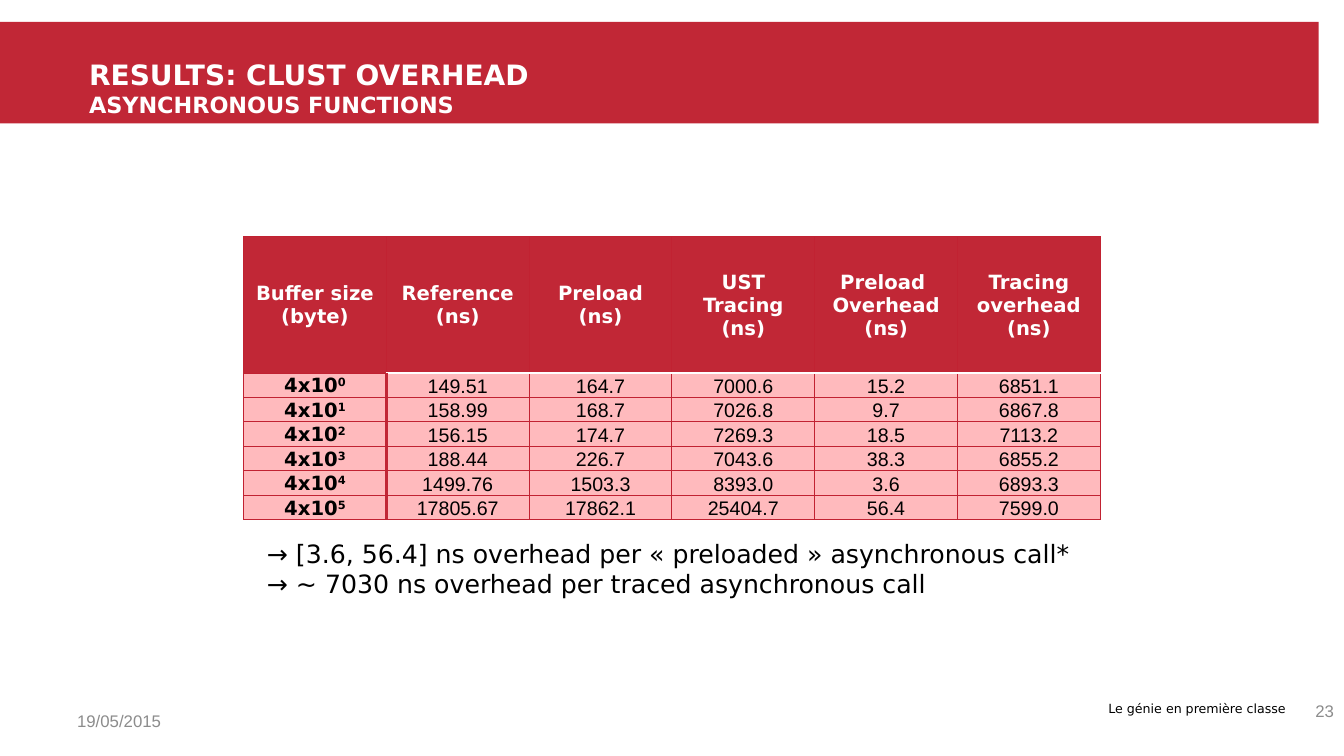
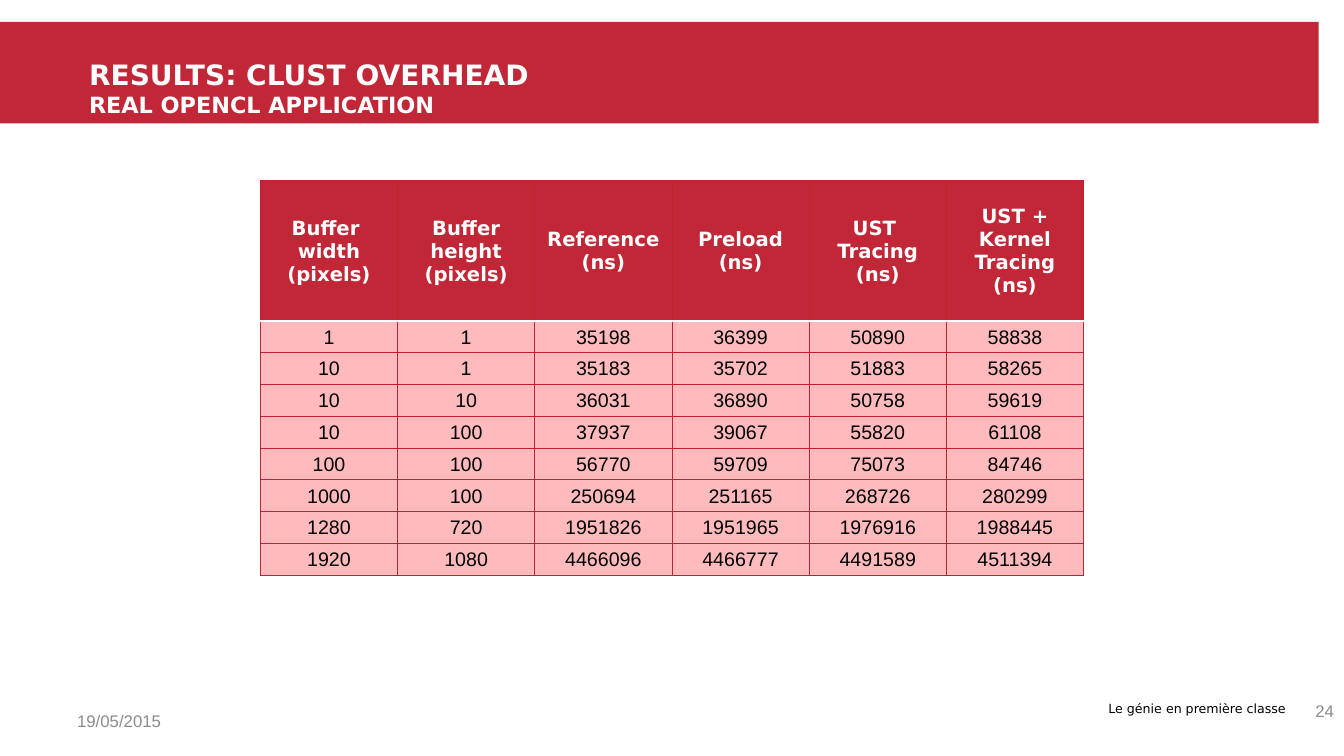
from copy import deepcopy
from dataclasses import dataclass

from lxml.etree import SubElement
from pptx import Presentation
from pptx.dml.color import RGBColor
from pptx.enum.shapes import MSO_SHAPE
from pptx.enum.text import MSO_ANCHOR, MSO_AUTO_SIZE, PP_ALIGN
from pptx.oxml import parse_xml
from pptx.oxml.ns import nsdecls, qn
from pptx.util import Emu, Inches, Pt

COLUMNS, ROWS = 160, 90
UNIT = Inches(1) / 12


@dataclass(frozen=True)
class Theme:
    red: str = "C12736"
    border: str = "C12232"
    pink: str = "FFBABD"
    white: str = "FFFFFF"
    black: str = "000000"
    grey: str = "8C8C8C"
    thin: float = 0.75
    thick: float = 2

    def style(self, size, color, name="DejaVu Sans", bold=False):
        return {"size": Pt(size), "name": name, "bold": bold, "color": color}


THEME = Theme()
TITLE = THEME.style(20, THEME.white, bold=True)
SUBTITLE = THEME.style(16, THEME.white, bold=True)
HEADER = THEME.style(14, THEME.white, bold=True)
LABEL = THEME.style(14, THEME.black, bold=True)
VALUE = THEME.style(14, THEME.black, "Arial")
NOTE = THEME.style(18, THEME.black)
MOTTO = THEME.style(9, THEME.black)
SMALL = THEME.style(12, THEME.grey, "Arial")


@dataclass(frozen=True)
class Box:
    left: float
    top: float
    width: float
    height: float

    def lengths(self):
        sides = (self.left, self.top, self.width, self.height)
        return [Emu(round(side * UNIT)) for side in sides]


def apply_values(target, values):
    for name, value in values.items():
        setattr(target, name, value)


def format_run(run, style):
    for name, value in style.items():
        if name == "color":
            run.font.color.rgb = RGBColor.from_string(value)
        else:
            setattr(run.font, name, value)


def write_lines(paragraph, lines, alignment):
    paragraph.alignment = alignment
    for index, (text, style) in enumerate(lines):
        base, _, power = text.partition("^")
        run = paragraph.add_run()
        run.text = base
        format_run(run, style)
        if power:
            exponent = paragraph.add_run()
            exponent.text = power
            format_run(exponent, style)
            exponent._r.get_or_add_rPr().set("baseline", "30000")
        if index < len(lines) - 1:
            line_break = SubElement(paragraph._p, qn("a:br"))
            line_break.append(deepcopy(run._r.get_or_add_rPr()))


def add_text(slide, box, text, style, alignment=PP_ALIGN.LEFT, anchor=MSO_ANCHOR.TOP):
    frame = slide.shapes.add_textbox(*box.lengths()).text_frame
    apply_values(frame, {"word_wrap": True, "vertical_anchor": anchor})
    lines = [(line, style) for line in text.split("\n")]
    write_lines(frame.paragraphs[0], lines, alignment)


def add_title(slide, box, title, subtitle):
    shape = slide.shapes.title
    sides = zip(("left", "top", "width", "height"), box.lengths())
    apply_values(shape, dict(sides))
    frame = shape.text_frame
    apply_values(frame, {
        "word_wrap": True,
        "auto_size": MSO_AUTO_SIZE.NONE,
        "vertical_anchor": MSO_ANCHOR.MIDDLE,
    })
    lines = [(title, TITLE), (subtitle, SUBTITLE)]
    write_lines(frame.paragraphs[0], lines, PP_ALIGN.LEFT)


def add_band(slide, box):
    band = slide.shapes.add_shape(MSO_SHAPE.RECTANGLE, *box.lengths())
    band.shadow.inherit = False
    band.fill.solid()
    band.fill.fore_color.rgb = RGBColor.from_string(THEME.red)
    band.line.fill.background()
    slide.shapes.title.element.addprevious(band.element)


def add_footer(slide, box, number):
    middle = MSO_ANCHOR.MIDDLE
    width, height = 37.3, 4.8
    date_box = Box(box.left + 8, box.top + 1.2, width, height)
    number_box = Box(box.left + box.width - width, box.top, width, height)
    motto_box = Box(box.left + 105.4, box.top + 0.6, 49.3, 3)
    add_text(slide, motto_box, "Le génie en première classe ", MOTTO, PP_ALIGN.RIGHT)
    add_text(slide, date_box, "19/05/2015", SMALL, anchor=middle)
    add_text(slide, number_box, str(number), SMALL, PP_ALIGN.RIGHT, middle)


def cell_borders(row, column, has_labels):
    borders = dict.fromkeys("LRTB", (THEME.border, THEME.thin))
    is_label = has_labels and column == 0
    if row < 2 and not is_label:
        borders["B" if row == 0 else "T"] = (THEME.white, THEME.thick)
    if has_labels and row > 0 and column < 2:
        borders["R" if column == 0 else "L"] = (THEME.red, THEME.thick)
    return borders


def draw_borders(cell, borders):
    properties = cell._tc.get_or_add_tcPr()
    for index, (side, (color, width)) in enumerate(borders.items()):
        properties.insert(index, parse_xml(
            f'<a:ln{side} {nsdecls("a")} w="{Pt(width)}"><a:solidFill>'
            f'<a:srgbClr val="{color}"/></a:solidFill></a:ln{side}>'
        ))


def fill_cell(cell, text, style, fill, anchor):
    apply_values(cell, {
        "margin_left": Inches(0.01),
        "margin_right": Inches(0.01),
        "margin_top": Inches(0.01),
        "margin_bottom": 0,
        "vertical_anchor": anchor,
    })
    cell.fill.solid()
    cell.fill.fore_color.rgb = RGBColor.from_string(fill)
    lines = [(line, style) for line in text.split("\n")]
    write_lines(cell.text_frame.paragraphs[0], lines, PP_ALIGN.CENTER)


def add_results_table(slide, box, header_height, rows, has_labels, body_anchor):
    shape = slide.shapes.add_table(len(rows), len(rows[0]), *box.lengths())
    table = shape.table
    apply_values(table, {"first_row": False, "horz_banding": False})
    body_height = (box.height - header_height) / (len(rows) - 1)
    for row_index, texts in enumerate(rows):
        is_header = row_index == 0
        height = header_height if is_header else body_height
        table.rows[row_index].height = Emu(round(height * UNIT))
        for column_index, text in enumerate(texts):
            cell = table.cell(row_index, column_index)
            is_label = has_labels and column_index == 0
            style = HEADER if is_header else LABEL if is_label else VALUE
            fill = THEME.red if is_header else THEME.pink
            anchor = MSO_ANCHOR.MIDDLE if is_header else body_anchor
            fill_cell(cell, text, style, fill, anchor)
            draw_borders(cell, cell_borders(row_index, column_index, has_labels))


def centred_box(top, width, height):
    return Box((COLUMNS - width) / 2, top, width, height)


def add_results_slide(presentation, number, subtitle, table, note=None):
    slide = presentation.slides.add_slide(presentation.slide_layouts[5])
    add_band(slide, Box(0, 2.6, 157, 12.1))
    add_title(slide, Box(9.4, 3, 144, 15), "RESULTS: CLUST OVERHEAD", subtitle)
    add_results_table(slide, **table)
    add_footer(slide, Box(0, 82.2, COLUMNS, ROWS - 82.2), number)
    if note:
        add_text(slide, Box(30.6, 63.5, 101.3, 8.5), note, NOTE)


ASYNCHRONOUS_ROWS = [
    ["Buffer size\n(byte)", "Reference\n(ns)", "Preload\n(ns)", "UST\nTracing\n(ns)",
     "Preload \nOverhead\n(ns)", "Tracing overhead (ns)"],
    ["4x10^0", "149.51", "164.7", "7000.6", "15.2", "6851.1"],
    ["4x10^1", "158.99", "168.7", "7026.8", "9.7", "6867.8"],
    ["4x10^2", "156.15", "174.7", "7269.3", "18.5", "7113.2"],
    ["4x10^3", "188.44", "226.7", "7043.6", "38.3", "6855.2"],
    ["4x10^4", "1499.76", "1503.3", "8393.0", "3.6", "6893.3"],
    ["4x10^5", "17805.67", "17862.1", "25404.7", "56.4", "7599.0"],
]

APPLICATION_ROWS = [
    ["Buffer \nwidth\n(pixels)", "Buffer height\n(pixels)", "Reference\n(ns)",
     "Preload\n(ns)", "UST \nTracing\n(ns)", "UST + Kernel\nTracing\n(ns)"],
    ["1", "1", "35198", "36399", "50890", "58838"],
    ["10", "1", "35183", "35702", "51883", "58265"],
    ["10", "10", "36031", "36890", "50758", "59619"],
    ["10", "100", "37937", "39067", "55820", "61108"],
    ["100", "100", "56770", "59709", "75073", "84746"],
    ["1000", "100", "250694", "251165", "268726", "280299"],
    ["1280", "720", "1951826", "1951965", "1976916", "1988445"],
    ["1920", "1080", "4466096", "4466777", "4491589", "4511394"],
]


def main():
    presentation = Presentation()
    presentation.slide_width = Emu(round(COLUMNS * UNIT))
    presentation.slide_height = Emu(round(ROWS * UNIT))
    add_results_slide(
        presentation, 23, "ASYNCHRONOUS FUNCTIONS",
        {"box": centred_box(28.2, 102, 33.7), "header_height": 16.2,
         "rows": ASYNCHRONOUS_ROWS, "has_labels": True,
         "body_anchor": MSO_ANCHOR.BOTTOM},
        "→ [3.6, 56.4] ns overhead per « preloaded » asynchronous call*\n"
        "→ ~ 7030 ns overhead per traced asynchronous call",
    )
    add_results_slide(
        presentation, 24, "REAL OPENCL APPLICATION",
        {"box": centred_box(21.5, 98, 47), "header_height": 16.7,
         "rows": APPLICATION_ROWS, "has_labels": False,
         "body_anchor": MSO_ANCHOR.MIDDLE},
    )
    presentation.save("out.pptx")


if __name__ == "__main__":
    main()
